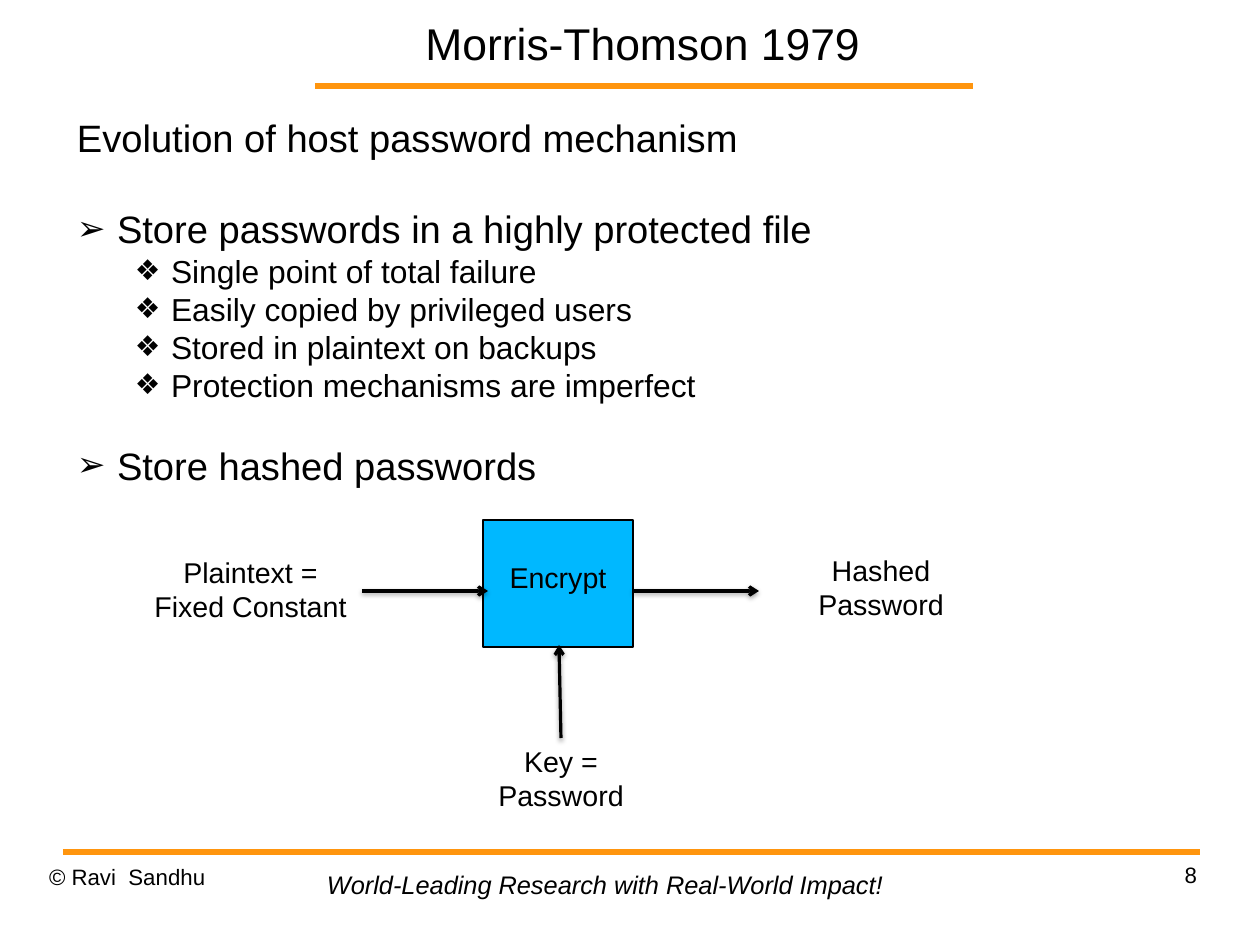
from dataclasses import dataclass
from lxml.etree import SubElement
from pptx import Presentation
from pptx.dml.color import RGBColor
from pptx.enum.shapes import MSO_CONNECTOR, MSO_SHAPE
from pptx.enum.text import MSO_ANCHOR, PP_ALIGN
from pptx.oxml.ns import qn
from pptx.util import Pt


@dataclass(frozen=True)
class Theme:
    """Hold the colours, font and type sizes."""
    ink: RGBColor = RGBColor(0, 0, 0)
    rule: RGBColor = RGBColor(0xFF, 0x95, 0x0E)
    box: RGBColor = RGBColor(0x00, 0xB8, 0xFF)
    face: str = "Arial"
    title: int = 28
    head: int = 24
    point: int = 20
    label: int = 18
    motto: int = 16
    foot: int = 14


THEME = Theme()
SCALE = 8000
POINTS = [
    ("Evolution of host password mechanism", 0, "", 0),
    ("Store passwords in a highly protected file", 0, "➢", 29),
    ("Single point of total failure", 1, "❖", 0),
    ("Easily copied by privileged users", 1, "❖", 0),
    ("Stored in plaintext on backups", 1, "❖", 0),
    ("Protection mechanisms are imperfect", 1, "❖", 0),
    ("Store hashed passwords", 0, "➢", 24),
]
LEVELS = [(54, -40, THEME.head), (108, -36, THEME.point)]
LABELS = [
    ("Plaintext =\nFixed Constant", (142, 549, 217, 81)),
    ("Key =\nPassword", (486, 738, 150, 81)),
    ("Hashed\nPassword", (806, 547, 150, 81)),
]
ARROWS = [
    ((362, 591), (488, 591)),
    ((561, 738), (559, 645)),
    ((633, 591), (759, 591)),
]


def px(count):
    """Turn whole pixels into EMU."""
    return count * SCALE


def style(para, size, align=PP_ALIGN.LEFT, lead=1.0, slant=False):
    """Format a paragraph and its runs."""
    para.alignment = align
    para.line_spacing = lead
    for run in para.runs:
        font = run.font
        font.name, font.size, font.italic = THEME.face, Pt(size), slant
        font.color.rgb = THEME.ink


def pad(frame, side, top):
    """Set the insets of a text frame."""
    frame.margin_left = frame.margin_right = px(side)
    frame.margin_top = frame.margin_bottom = px(top)


def add_text(slide, text, place, size, wrap=True, inset=(0, 0), **look):
    """Add a text box in one style and return its frame."""
    frame = slide.shapes.add_textbox(*map(px, place)).text_frame
    frame.word_wrap = wrap
    pad(frame, *inset)
    frame.text = text
    for para in frame.paragraphs:
        style(para, size, **look)
    return frame


def add_list(slide, place):
    """Add the heading and its bulleted points."""
    text = "\n".join(point[0] for point in POINTS)
    frame = add_text(slide, text, place, THEME.head)
    for para, (_, level, mark, gap) in zip(frame.paragraphs, POINTS):
        left, hang, size = LEVELS[level]
        props = para._p.get_or_add_pPr()
        props.set("marL", str(px(left)))
        props.set("indent", str(px(hang)))
        para.level = level
        if mark:
            SubElement(props, qn("a:buSzPct"), val="90000")
            SubElement(props, qn("a:buFont"), typeface=THEME.face)
            SubElement(props, qn("a:buChar"), char=mark)
        style(para, size)
        if gap:
            para.space_before = Pt(gap)


def add_line(slide, start, end, color, width):
    """Add a straight line and return it with its effect list."""
    line = slide.shapes.add_connector(
        MSO_CONNECTOR.STRAIGHT, *map(px, start + end))
    line.line.color.rgb = color
    line.line.width = Pt(width)
    return line, SubElement(line._element.spPr, qn("a:effectLst"))


def add_arrow(slide, start, end):
    """Add an arrow with a soft shadow below it."""
    line, effects = add_line(slide, start, end, THEME.ink, 2)
    SubElement(line.line._get_or_add_ln(), qn("a:tailEnd"), type="arrow")
    shade = SubElement(effects, qn("a:outerShdw"), blurRad=str(Pt(3.1)),
                       dist=str(Pt(1.6)), dir="5400000", rotWithShape="0")
    tint = SubElement(shade, qn("a:srgbClr"), val=str(THEME.ink))
    SubElement(tint, qn("a:alpha"), val="38000")


def add_box(slide, text, place):
    """Add the filled box with its label."""
    box = slide.shapes.add_shape(MSO_SHAPE.RECTANGLE, *map(px, place))
    box.shadow.inherit = False
    box.fill.solid()
    box.fill.fore_color.rgb = THEME.box
    box.line.color.rgb = THEME.ink
    box.line.width = Pt(0.75)
    frame = box.text_frame
    pad(frame, 11, 6)
    frame.margin_top = px(40)
    frame.vertical_anchor = MSO_ANCHOR.TOP
    frame.text = text
    style(frame.paragraphs[0], THEME.label, PP_ALIGN.CENTER)


def main():
    """Build the slide and save it."""
    deck = Presentation()
    deck.slide_width, deck.slide_height = px(1260), px(945)
    slide = deck.slides.add_slide(deck.slide_layouts[6])
    add_line(slide, (315, 86), (973, 86), THEME.rule, 4.31)
    add_line(slide, (63, 852), (1200, 852), THEME.rule, 4.31)
    title = add_text(slide, "Morris-Thomson 1979", (275, 0, 735, 86),
                     THEME.title, align=PP_ALIGN.CENTER)
    title.vertical_anchor = MSO_ANCHOR.MIDDLE
    add_list(slide, (63, 114, 1076, 373))
    add_box(slide, "Encrypt", (483, 520, 150, 127))
    for start, end in ARROWS:
        add_arrow(slide, start, end)
    for text, place in LABELS:
        add_text(slide, text, place, THEME.label, wrap=False, inset=(11, 6),
                 align=PP_ALIGN.CENTER)
    add_text(slide, "© Ravi  Sandhu", (49, 863, 294, 65), THEME.foot,
             lead=1.01)
    add_text(slide, "World-Leading Research with Real-World Impact!",
             (316, 863, 581, 42), THEME.motto, wrap=False, inset=(11, 6),
             slant=True)
    add_text(slide, "8", (903, 861, 294, 65), THEME.foot,
             align=PP_ALIGN.RIGHT, lead=1.01)
    deck.save("out.pptx")


if __name__ == "__main__":
    main()
